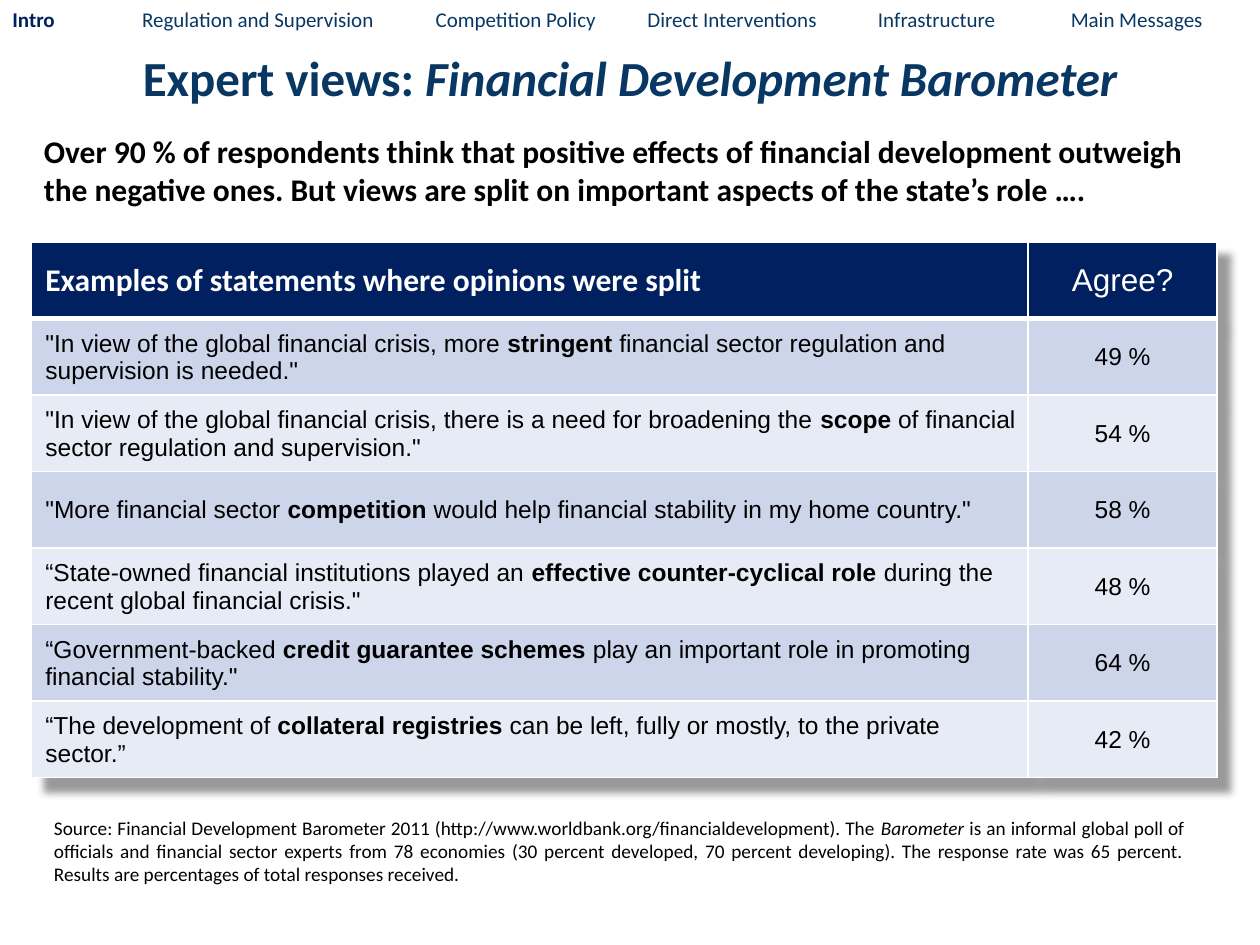
from lxml import etree
from pptx import Presentation
from pptx.dml.color import RGBColor
from pptx.enum.text import MSO_ANCHOR, PP_ALIGN
from pptx.oxml import parse_xml
from pptx.util import Pt

LEFT, CENTER, JUSTIFY = PP_ALIGN.LEFT, PP_ALIGN.CENTER, PP_ALIGN.JUSTIFY
TOP, MIDDLE = MSO_ANCHOR.TOP, MSO_ANCHOR.MIDDLE
PX = 9144  # the slide is 1000 x 750 px
NAVY, BLUE, BLACK, WHITE = "002060", "083763", "000000", "FFFFFF"
BANDS = ["CCD5EA", "E7EBF5"]
DRAWING = "http://schemas.openxmlformats.org/drawingml/2006/main"


def write_text(frame, text, size, color=BLACK, font="Calibri", bold=False,
               emphasis="bold", emphasis_color=None, align=LEFT, anchor=TOP):
    """Write one paragraph; parts between asterisks are emphasised."""
    frame.word_wrap = True
    frame.vertical_anchor = anchor
    paragraph = frame.paragraphs[0]
    paragraph.alignment = align
    for index, part in enumerate(text.split("*")):
        if not part:
            continue
        emphasised = index % 2 == 1
        run = paragraph.add_run()
        run.text = part
        run.font.name = font
        run.font.size = Pt(size)
        run.font.bold = bold or (emphasised and emphasis == "bold")
        run.font.italic = emphasised and emphasis == "italic"
        run_color = emphasis_color if emphasised and emphasis_color else color
        run.font.color.rgb = RGBColor.from_string(run_color)
    return paragraph


presentation = Presentation()
presentation.slide_width = 1000 * PX
presentation.slide_height = 750 * PX
slide = presentation.slides.add_slide(presentation.slide_layouts[5])

# Title
title = slide.shapes.title
title.left, title.top, title.width, title.height = 0, 33 * PX, 1000 * PX, 57 * PX
write_text(title.text_frame, "Expert views: *Financial Development Barometer*", 28,
           color=BLUE, bold=True, emphasis="italic", align=CENTER)

# Navigation line, with one tab stop for each later section
navigation = slide.shapes.add_textbox(0, 0, 1000 * PX, 30 * PX)
sections = ["*Intro*", "Regulation and Supervision", "Competition Policy",
            "Direct Interventions", "Infrastructure", "Main Messages"]
paragraph = write_text(navigation.text_frame, "\t".join(sections), 12,
                       color=BLUE, emphasis_color=NAVY)
tab_list = etree.SubElement(paragraph._p.get_or_add_pPr(), f"{{{DRAWING}}}tabLst")
for position in [103, 336, 504, 687, 840]:
    etree.SubElement(tab_list, f"{{{DRAWING}}}tab", pos=str(position * PX), algn="l")

# Lead statement
lead = slide.shapes.add_textbox(25 * PX, 100 * PX, 950 * PX, 71 * PX)
write_text(lead.text_frame,
           "Over 90 % of respondents think that positive effects of financial development "
           "outweigh the negative ones. But views are split on important aspects of the "
           "state’s role ….", 18, bold=True)

# Table of statements
rows = [
    ("Examples of statements where opinions were split", "Agree?"),
    ('"In view of the global financial crisis, more *stringent* financial sector '
     'regulation and supervision is needed."', "49 %"),
    ('"In view of the global financial crisis, there is a need for broadening the '
     '*scope* of financial sector regulation and supervision."', "54 %"),
    ('"More financial sector *competition* would help financial stability in my '
     'home country."', "58 %"),
    ('“State-owned financial institutions played an *effective counter-cyclical role* '
     'during the recent global financial crisis."', "48 %"),
    ('“Government-backed *credit guarantee schemes* play an important role in '
     'promoting financial stability."', "64 %"),
    ("“The development of *collateral registries* can be left, fully or mostly, to "
     "the private sector.”", "42 %"),
]
table = slide.shapes.add_table(len(rows), 2, 25 * PX, 192 * PX,
                               941 * PX, 425 * PX).table
table.columns[0].width, table.columns[1].width = 791 * PX, 150 * PX

for row_index, row in enumerate(rows):
    table.rows[row_index].height = 425 * PX // len(rows)
    header = row_index == 0
    for column_index, text in enumerate(row):
        statement = column_index == 0
        cell = table.cell(row_index, column_index)
        cell.margin_left = (11 if statement else 1) * PX
        cell.margin_right = cell.margin_top = 1 * PX
        cell.margin_bottom = 0
        write_text(cell.text_frame, text, 18 if header else 14,
                   color=WHITE if header else BLACK,
                   font="Calibri" if header and statement else "Arial",
                   bold=header and statement,
                   align=LEFT if statement else CENTER)
        cell.vertical_anchor = MIDDLE

        # White borders, thicker under the header
        properties = cell._tc.get_or_add_tcPr()
        for side in "LRTB":
            thick = (row_index, side) in [(0, "B"), (1, "T")]
            properties.append(parse_xml(
                f'<a:ln{side} xmlns:a="{DRAWING}" w="{Pt(3 if thick else 1)}">'
                f'<a:solidFill><a:srgbClr val="{WHITE}"/></a:solidFill></a:ln{side}>'))
        cell.fill.solid()
        fill_color = NAVY if header else BANDS[(row_index - 1) % 2]
        cell.fill.fore_color.rgb = RGBColor.from_string(fill_color)

# Table shadow, down and to the right
table._tbl.tblPr.insert(0, parse_xml(
    f'<a:effectLst xmlns:a="{DRAWING}">'
    f'<a:outerShdw blurRad="{Pt(4)}" dist="{15 * PX}" dir="2700000" algn="tl" rotWithShape="0">'
    f'<a:srgbClr val="{BLACK}"><a:alpha val="40000"/></a:srgbClr>'
    f'</a:outerShdw></a:effectLst>'))

# Source note
source = slide.shapes.add_textbox(33 * PX, 642 * PX, 917 * PX, 66 * PX)
write_text(source.text_frame,
           "Source: Financial Development Barometer 2011 "
           "(http://www.worldbank.org/financialdevelopment). The *Barometer* is an informal "
           "global poll of officials and financial sector experts from 78 economies "
           "(30 percent developed, 70 percent developing). The response rate was 65 percent. "
           "Results are percentages of total responses received.",
           11, emphasis="italic", align=JUSTIFY, anchor=MIDDLE)

presentation.save("out.pptx")
